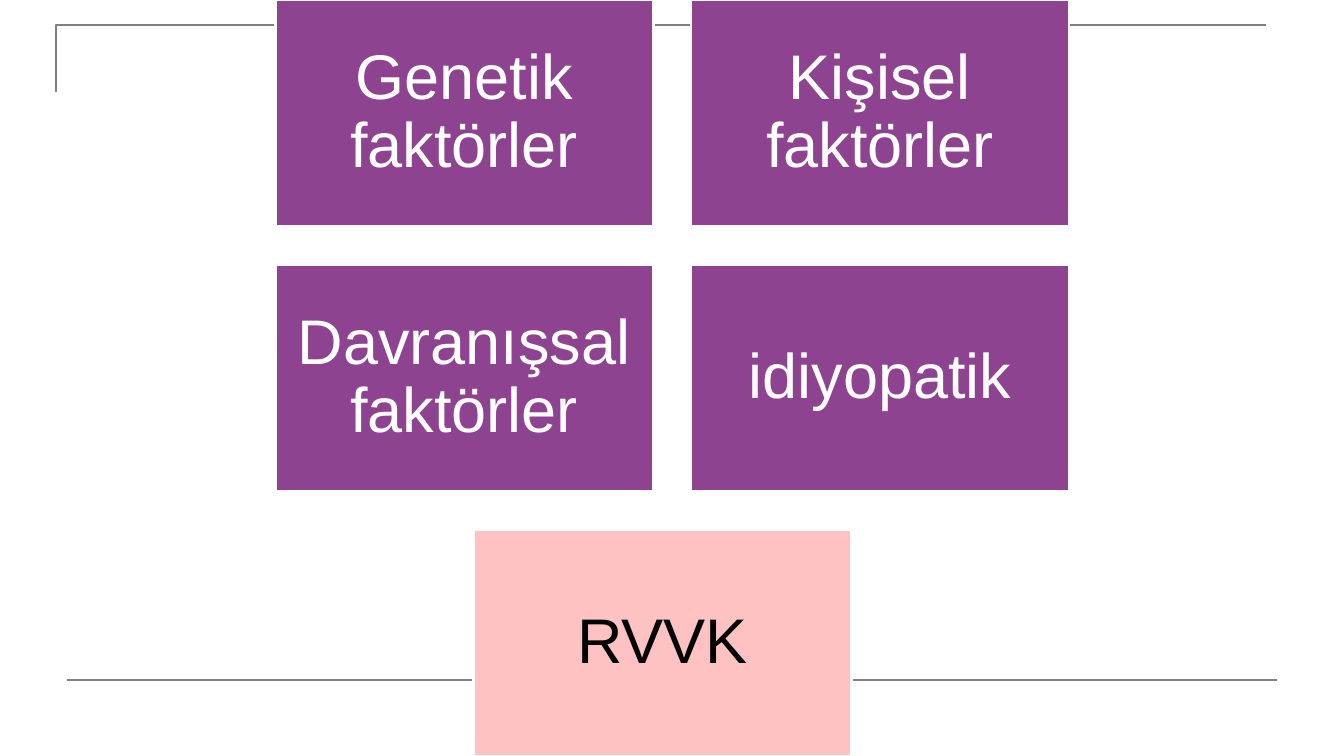
from dataclasses import dataclass

from lxml.etree import SubElement
from pptx import Presentation
from pptx.dml.color import RGBColor
from pptx.enum.shapes import MSO_CONNECTOR as Connector, MSO_SHAPE as Shape
from pptx.enum.text import MSO_ANCHOR as Anchor, PP_ALIGN as Align
from pptx.oxml.ns import qn
from pptx.util import Inches, Pt

COLUMNS, ROWS = 160, 90
CARD_WIDTH, CARD_HEIGHT, GAP = 45, 27, 4.5
FACTORS_LEFT, OUTCOME_LEFT = 32.76, 56.4


@dataclass(frozen=True)
class Theme:
    font: str = "Arial"
    text_size: float = 45
    line_spacing: float = 0.9
    inset: float = 2.25
    rule_width: float = 1.5
    border_width: float = 2
    rule: RGBColor = RGBColor(0x80, 0x80, 0x80)
    factor: RGBColor = RGBColor(0x8D, 0x43, 0x8F)
    outcome: RGBColor = RGBColor(0xFF, 0xC2, 0xC2)
    light: RGBColor = RGBColor(0xFF, 0xFF, 0xFF)
    dark: RGBColor = RGBColor(0x00, 0x00, 0x00)


class Canvas:
    def __init__(self, deck, theme):
        self.theme = theme
        self.column = deck.slide_width / COLUMNS
        self.row = deck.slide_height / ROWS
        self.page = deck.slides.add_slide(deck.slide_layouts[6])

    def point(self, column, row):
        return round(column * self.column), round(row * self.row)

    def style_rule(self, line):
        line.color.rgb = self.theme.rule
        line.width = Pt(self.theme.rule_width)

    def corner(self, *corners):
        start, *others = [self.point(*corner) for corner in corners]
        builder = self.page.shapes.build_freeform(*start)
        builder.add_line_segments(others, close=False)
        outline = builder.convert_to_shape()
        outline.shadow.inherit = False
        outline.fill.background()
        self.style_rule(outline.line)

    def rule(self, start, end):
        line = self.page.shapes.add_connector(
            Connector.STRAIGHT, *self.point(*start), *self.point(*end))
        SubElement(line._element.spPr, qn("a:effectLst"))
        self.style_rule(line.line)

    def card(self, text, left, top, fill, color):
        box = self.page.shapes.add_shape(
            Shape.RECTANGLE, *self.point(left, top),
            *self.point(CARD_WIDTH, CARD_HEIGHT))
        box.shadow.inherit = False
        box.fill.solid()
        box.fill.fore_color.rgb = fill
        box.line.color.rgb = self.theme.light
        box.line.width = Pt(self.theme.border_width)
        frame = box.text_frame
        frame.word_wrap = True
        frame.vertical_anchor = Anchor.MIDDLE
        inset = round(self.theme.inset * self.column)
        frame.margin_left = frame.margin_right = inset
        frame.margin_top = frame.margin_bottom = inset
        para = frame.paragraphs[0]
        para.text = text
        para.alignment = Align.CENTER
        para.line_spacing = self.theme.line_spacing
        para.font.name = self.theme.font
        para.font.size = Pt(self.theme.text_size)
        para.font.color.rgb = color


def main():
    deck = Presentation()
    deck.slide_width, deck.slide_height = Inches(13.33), Inches(7.5)
    theme = Theme()
    canvas = Canvas(deck, theme)

    canvas.corner((6.72, 11), (6.72, 3), (150.72, 3))
    canvas.rule((8, 81), (152, 81))

    factors = [
        ["Genetik faktörler", "Kişisel faktörler"],
        ["Davranışsal faktörler", "idiyopatik"],
    ]
    row_step = CARD_HEIGHT + GAP
    for row, names in enumerate(factors):
        for column, name in enumerate(names):
            left = FACTORS_LEFT + column * (CARD_WIDTH + GAP)
            canvas.card(name, left, row * row_step, theme.factor, theme.light)
    canvas.card("RVVK", OUTCOME_LEFT, len(factors) * row_step,
                theme.outcome, theme.dark)

    deck.save("out.pptx")


if __name__ == "__main__":
    main()
